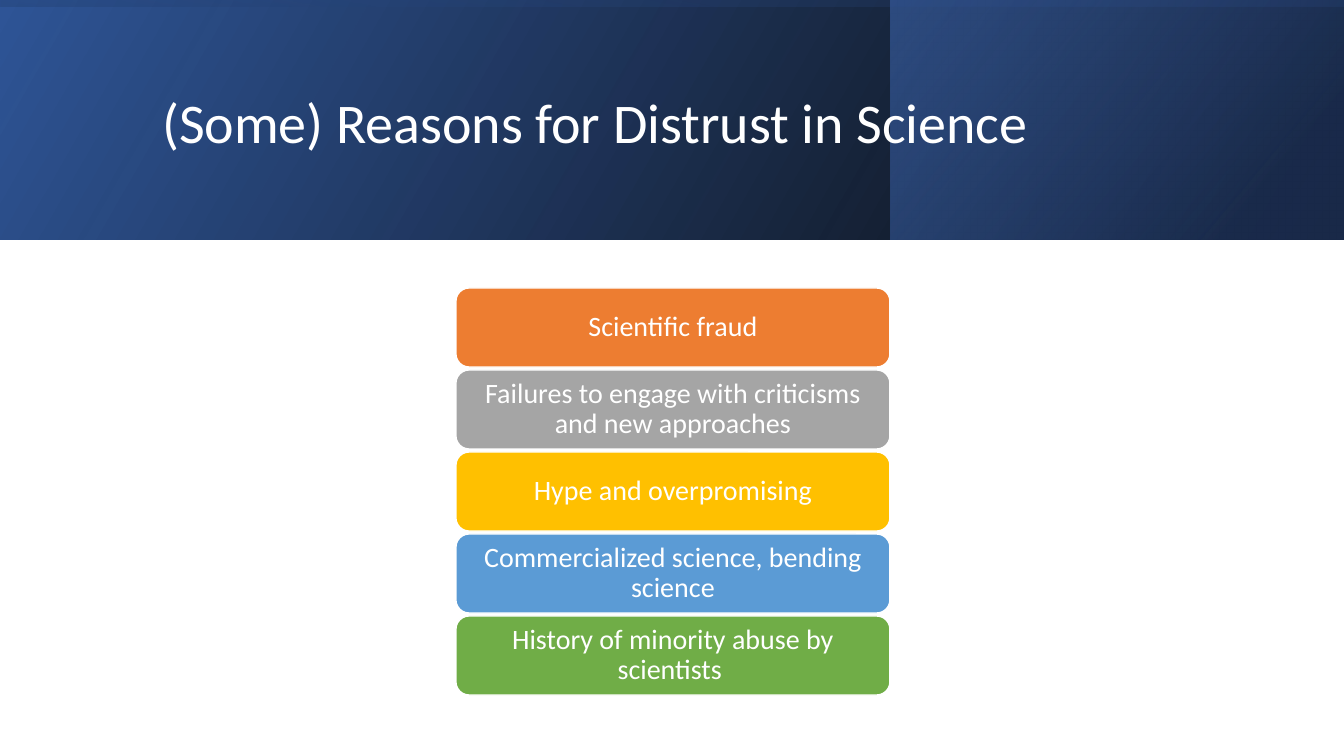
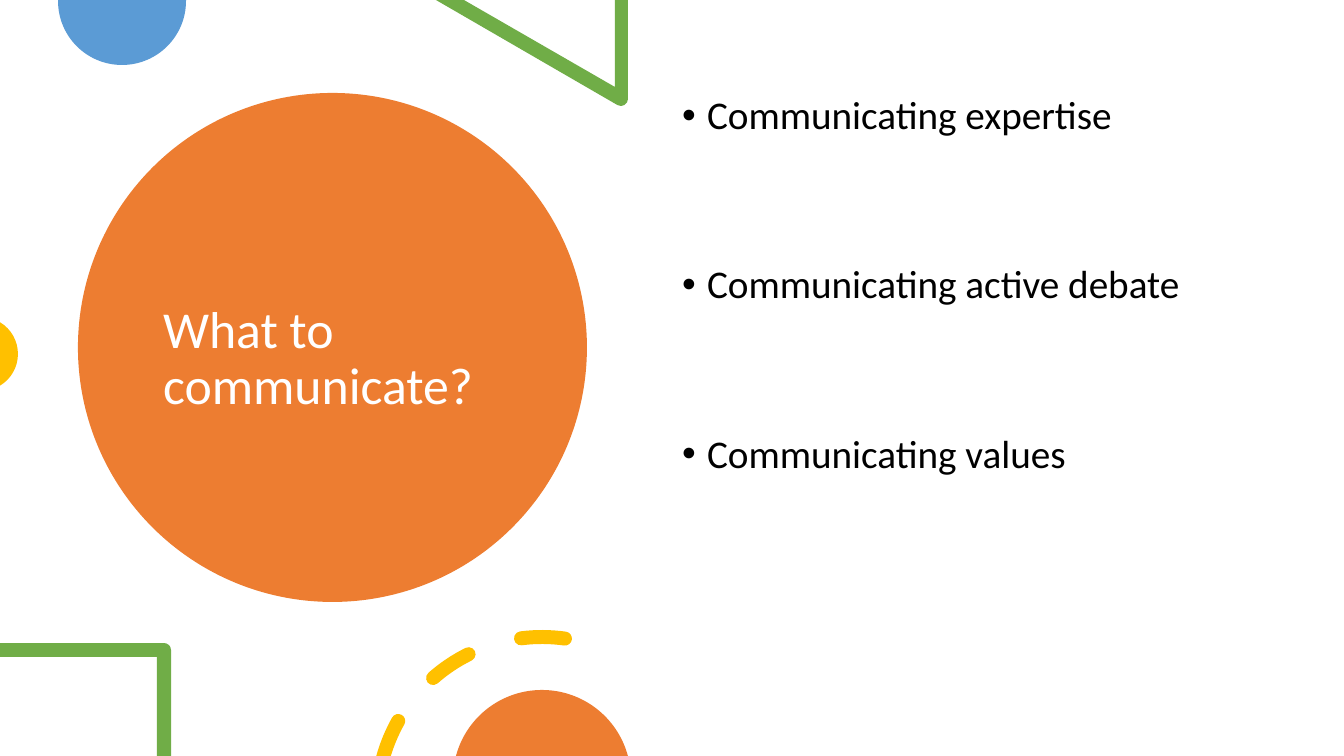
from math import ceil, cos, radians, sin, tan

from lxml.etree import SubElement
from pptx import Presentation
from pptx.dml.color import RGBColor
from pptx.enum.shapes import MSO_SHAPE
from pptx.enum.text import MSO_ANCHOR, MSO_AUTO_SIZE, PP_ALIGN
from pptx.oxml.ns import qn
from pptx.util import Pt

# Shared look
WIDE, HIGH = 1344, 756
UNIT = 12192000 / WIDE
BAND = 240
HUES = {
    "white": "FFFFFF", "black": "000000", "orange": "ED7D31",
    "grey": "A5A5A5", "gold": "FFC000", "sky": "5B9BD5",
    "green": "70AD47", "blue": "4472C4", "deep": "2F5597", "navy": "203864",
}
FRAME = {"word_wrap": True, "auto_size": MSO_AUTO_SIZE.NONE,
         "vertical_anchor": MSO_ANCHOR.MIDDLE}
LEFT = {"alignment": PP_ALIGN.LEFT, "line_spacing": 0.9}
MID = {"alignment": PP_ALIGN.CENTER, "line_spacing": 0.9}


def px(num):
    return round(num * UNIT)


def hue(name):
    return RGBColor.from_string(HUES[name])


def apply(item, vals):
    for key, val in vals.items():
        setattr(item, key, val)


def place(item, box):
    apply(item, dict(zip(("left", "top", "width", "height"), map(px, box))))


# Text
def write(para, text, size, tone, look):
    apply(para, look)
    run = para.add_run()
    run.text = text
    apply(run.font, {"name": "Calibri", "size": Pt(size)})
    run.font.color.rgb = hue(tone)


def title(slide, text, box, size):
    head = slide.shapes.title
    place(head, box)
    apply(head.text_frame, FRAME)
    write(head.text_frame.paragraphs[0], text, size, "white", LEFT)
    slide.shapes._spTree.append(head._element)  # in front of the art


def bullets(slide, lines, box):
    body = slide.placeholders[1]
    place(body, box)
    frame = body.text_frame
    apply(frame, {**FRAME, "vertical_anchor": MSO_ANCHOR.TOP})
    look = {**LEFT, "space_before": Pt(0), "space_after": Pt(90.5)}
    for num, line in enumerate(lines):
        para = frame.add_paragraph() if num else frame.paragraphs[0]
        write(para, line, 28, "black", look)
        props = para._p.get_or_add_pPr()
        props.set("marL", str(px(25)))
        props.set("indent", str(px(-25)))


# Shapes
def paint(item, tone):
    item.shadow.inherit = False
    item.line.fill.background()
    item.fill.solid()
    item.fill.fore_color.rgb = hue(tone)


def shape(slide, kind, box, tone):
    item = slide.shapes.add_shape(kind, *map(px, box))
    paint(item, tone)
    return item


def fade(slide, box, stops, angle, turn=0):
    item = shape(slide, MSO_SHAPE.RECTANGLE, box, "deep")
    item.rotation = turn
    item._element.spPr.xfrm.set("flipH", "1")
    item.fill.gradient()
    item.fill.gradient_angle = angle
    for stop, (spot, tone, alpha) in zip(item.fill.gradient_stops, stops):
        stop.position = spot / 100
        stop.color.rgb = hue(tone)
        SubElement(stop._gs[0], qn("a:alpha")).set("val", str(alpha * 1000))


def card(slide, text, box, tone):
    item = shape(slide, MSO_SHAPE.ROUNDED_RECTANGLE, box, tone)
    item.line.color.rgb = hue("white")
    item.line.width = Pt(1)
    frame = item.text_frame
    apply(frame, {**FRAME, "margin_left": px(12), "margin_right": px(12),
                  "margin_top": px(8), "margin_bottom": px(8)})
    write(frame.paragraphs[0], text, 20, "white", MID)


# Outlines: a pair is a corner, six numbers are a curve
def spot(x, y, rad, turn):
    return x + rad * cos(radians(turn)), y + rad * sin(radians(turn))


def arc(x, y, rad, start, end):
    """Curves from start to end, in degrees clockwise from the right."""
    count = ceil(abs(end - start) / 90)
    step = (end - start) / count
    pull = rad * 4 / 3 * tan(radians(step / 4))
    path = [spot(x, y, rad, start)]
    for num in range(count):
        one = start + num * step
        two = one + step
        path.append(spot(*spot(x, y, rad, one), pull, one + 90)
                    + spot(*spot(x, y, rad, two), -pull, two + 90)
                    + spot(x, y, rad, two))
    return path


def bend(item, loops):
    """Join each curve's three straight steps into one curve."""
    paths = item._element.iter(qn("a:lnTo"))
    steps = iter(list(paths))
    for part in (part for loop in loops for part in loop[1:]):
        first = next(steps)
        if len(part) == 6:
            first.tag = qn("a:cubicBezTo")
            for _ in range(2):
                extra = next(steps)
                first.append(extra[0])
                extra.getparent().remove(extra)


def free(slide, tone, *loops):
    pen = None
    for loop in loops:
        dots = [(px(part[i]), px(part[i + 1]))
                for part in loop for i in range(0, len(part), 2)]
        if pen:
            pen.move_to(*dots[0])
        else:
            pen = slide.shapes.build_freeform(*dots[0], scale=1.0)
        # the closing step stays out of the list of straight steps
        pen.add_line_segments(dots[1:], close=True)
    item = pen.convert_to_shape()
    bend(item, loops)
    paint(item, tone)


def dash(x, y, rad, start, end, cut=False):
    half = 7
    low = start + 1.4 if cut else start  # a cut dash ends on the slide edge
    loop = arc(x, y, rad + half, start, end)
    loop += arc(*spot(x, y, rad, end), half, end, end + 180)[1:]
    loop += arc(x, y, rad - half, end, low)[1:]
    if not cut:
        loop += arc(*spot(x, y, rad, start), half,
                    start + 180, start + 360)[1:]
    return loop


# Slides
def reasons(deck):
    slide = deck.slides.add_slide(deck.slide_layouts[5])
    fade(slide, (0, 0, WIDE, BAND),
         [(0, "black", 96), (100, "deep", 100)], 30)
    fade(slide, (891, 0, 452, BAND),
         [(19, "navy", 68), (100, "blue", 48)], 40)
    side = (WIDE - BAND) // 2
    fade(slide, (side, -side, BAND, WIDE),
         [(23, "deep", 16), (99, "black", 45)], 10, 270)
    title(slide, "(Some) Reasons for Distrust in Science",
          (152, 39, 1072, 173), 40)
    cards = [
        ("Scientific fraud", "orange"),
        ("Failures to engage with criticisms and new approaches", "grey"),
        ("Hype and overpromising", "gold"),
        ("Commercialized science, bending science", "sky"),
        ("History of minority abuse by scientists ", "green"),
    ]
    for row, (text, tone) in enumerate(cards):
        card(slide, text, (456, 288 + 82 * row, 434, 79), tone)


def topics(deck):
    slide = deck.slides.add_slide(deck.slide_layouts[1])
    shape(slide, MSO_SHAPE.OVAL, (78, 93, 509, 509), "orange")
    # Top and left edge
    free(slide, "sky", [(186, 0), *arc(122, 1, 64, 0, 180), (58, 0)])
    free(slide, "green", [(628, 0), (615, 0), (615, 87), (464, 0), (436, 0),
                          *arc(621, 99, 7, 120, 0)])
    free(slide, "gold", arc(-19, 354, 37, -59, 59))
    # Bottom edge
    free(slide, "green", [(0, 643), (0, 657), (157, 657), (157, HIGH),
                          (171, HIGH), *arc(164, 650, 7, 0, -90)])
    ring = (542, 802, 165)
    free(slide, "gold", dash(*ring, 195.5, 209.4, cut=True),
         dash(*ring, 228.7, 243.6), dash(*ring, 262.7, 278))
    free(slide, "orange", arc(542, 779, 89, 195, 345))
    title(slide, "What to communicate?", (153, 135, 357, 449), 37)
    bullets(slide, ["Communicating expertise", "Communicating active debate",
                    "Communicating values"], (672, 91, 580, 539))


def main():
    deck = Presentation()
    apply(deck, {"slide_width": px(WIDE), "slide_height": px(HIGH)})
    reasons(deck)
    topics(deck)
    deck.save("out.pptx")


if __name__ == "__main__":
    main()
